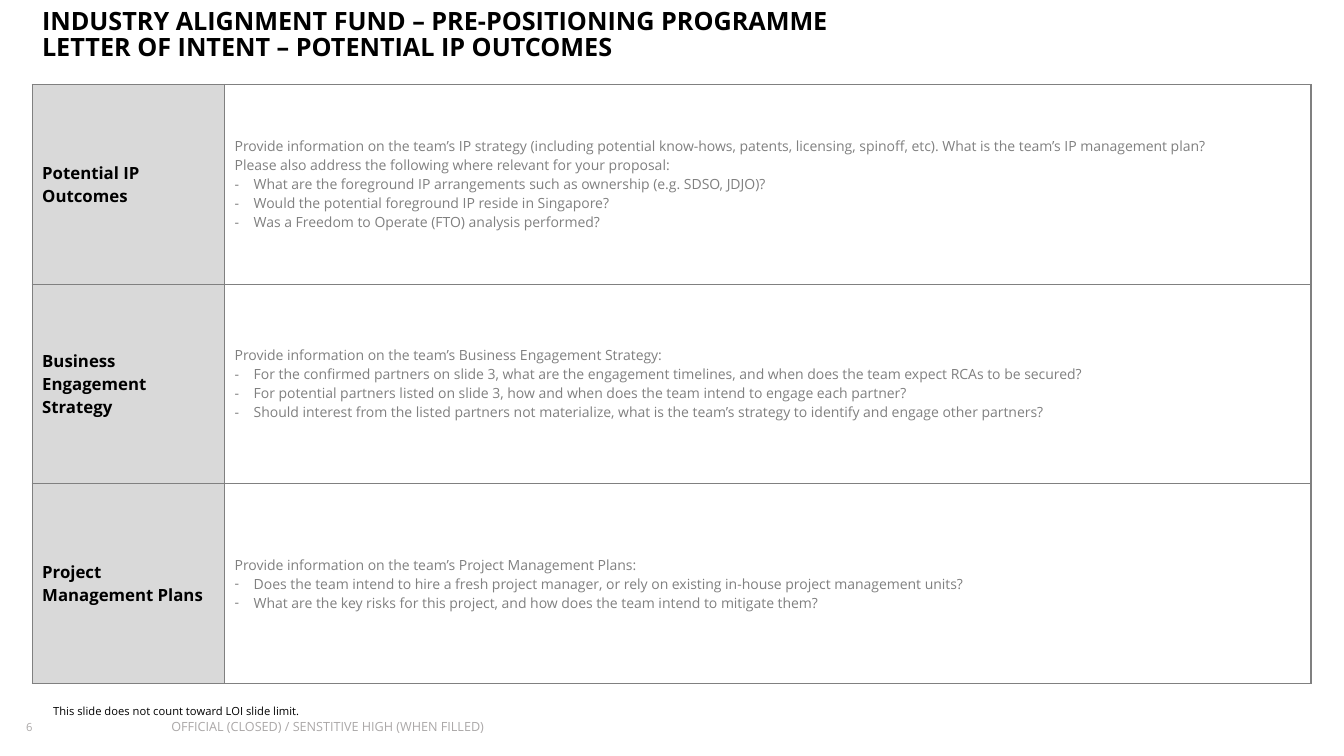
from lxml import etree
from pptx import Presentation
from pptx.dml.color import RGBColor
from pptx.enum import text
from pptx.oxml import ns
from pptx.util import Cm, Pt

FONT = "Open Sans"
BLACK, GREY, LABEL_FILL, FOOTER = "000000", "808080", "D9D9D9", "ABA8A8"
INDENT = Cm(0.48)


def write(para, words, size, color, bold=False):
    span = para.add_run()
    span.text = words
    span.font.name, span.font.size, span.font.bold = FONT, Pt(size), bold
    span.font.color.rgb = RGBColor.from_string(color)


def add_text(left, top, width, height, words, size, color, bold=False, margin=0):
    """Add a text box and return its paragraph."""
    box = page.shapes.add_textbox(Cm(left), Cm(top), Cm(width), Cm(height))
    frame = box.text_frame
    frame.word_wrap = True
    frame.margin_left = frame.margin_right = Cm(margin)
    frame.margin_top = frame.margin_bottom = Cm(margin / 2)
    para = frame.paragraphs[0]
    for number, line in enumerate(words):
        if number:
            para.add_line_break()
        write(para, line, size, color, bold)
    return para


deck = Presentation()
deck.slide_width, deck.slide_height = Cm(33.87), Cm(19.05)
page = deck.slides.add_slide(deck.slide_layouts[6])

title = add_text(0.81, 0.1, 28.93, 1.09,
                 ["INDUSTRY ALIGNMENT FUND – PRE-POSITIONING PROGRAMME",
                  "LETTER OF INTENT – POTENTIAL IP OUTCOMES"],
                 18, BLACK, bold=True, margin=0.25)
title.line_spacing = 0.88

# Each section: label, introductory lines, bulleted questions
sections = [
    ("Potential IP Outcomes",
     ["Provide information on the team’s IP strategy (including potential know-hows, patents, "
      "licensing, spinoff, etc). What is the team’s IP management plan?",
      "Please also address the following where relevant for your proposal:"],
     ["What are the foreground IP arrangements such as ownership (e.g. SDSO, JDJO)?",
      "Would the potential foreground IP reside in Singapore?",
      "Was a Freedom to Operate (FTO) analysis performed?"]),
    ("Business Engagement Strategy",
     ["Provide information on the team’s Business Engagement Strategy:"],
     ["For the confirmed partners on slide 3, what are the engagement timelines, and when does "
      "the team expect RCAs to be secured?",
      "For potential partners listed on slide 3, how and when does the team intend to engage "
      "each partner?",
      "Should interest from the listed partners not materialize, what is the team’s strategy to "
      "identify and engage other partners?"]),
    ("Project Management Plans",
     ["Provide information on the team’s Project Management Plans:"],
     ["Does the team intend to hire a fresh project manager, or rely on existing in-house "
      "project management units?",
      "What are the key risks for this project, and how does the team intend to mitigate them?"]),
]

table = page.shapes.add_table(len(sections), 2, Cm(0.81), Cm(2.13), Cm(32.23), Cm(15.09)).table
table.first_row = table.horz_banding = False
table.columns[0].width, table.columns[1].width = Cm(4.85), Cm(27.38)

for row, (label, intro, questions) in enumerate(sections):
    label_cell, detail_cell = table.cell(row, 0), table.cell(row, 1)
    write(label_cell.text_frame.paragraphs[0], label, 12, BLACK, bold=True)

    frame = detail_cell.text_frame
    for number, line in enumerate(intro + questions):
        para = frame.add_paragraph() if number else frame.paragraphs[0]
        if number >= len(intro):
            properties = para._p.get_or_add_pPr()
            properties.set("marL", str(INDENT))
            properties.set("indent", str(-INDENT))
            etree.SubElement(properties, ns.qn("a:buFont"), typeface=FONT)
            etree.SubElement(properties, ns.qn("a:buChar"), char="-")
        write(para, line, 10, GREY)

    for cell in (label_cell, detail_cell):
        cell.vertical_anchor = text.MSO_ANCHOR.MIDDLE
        properties = cell._tc.get_or_add_tcPr()
        for side in ("a:lnL", "a:lnR", "a:lnT", "a:lnB"):
            border = etree.SubElement(properties, ns.qn(side), w=str(Pt(1)))
            fill = etree.SubElement(border, ns.qn("a:solidFill"))
            etree.SubElement(fill, ns.qn("a:srgbClr"), val=GREY)
    label_cell.fill.solid()
    label_cell.fill.fore_color.rgb = RGBColor.from_string(LABEL_FILL)
    detail_cell.fill.background()

add_text(1.09, 17.63, 24.41, 0.61, ["This slide does not count toward LOI slide limit."],
         8, BLACK, margin=0.25)
page_number = add_text(0.66, 18.11, 2.01, 0.48, ["6"], 8, FOOTER)
page_number.line_spacing = 1.1
add_text(4.32, 18.11, 13.54, 0.48, ["OFFICIAL (CLOSED) / SENSTITIVE HIGH (WHEN FILLED)"], 9, FOOTER)

deck.save("out.pptx")
